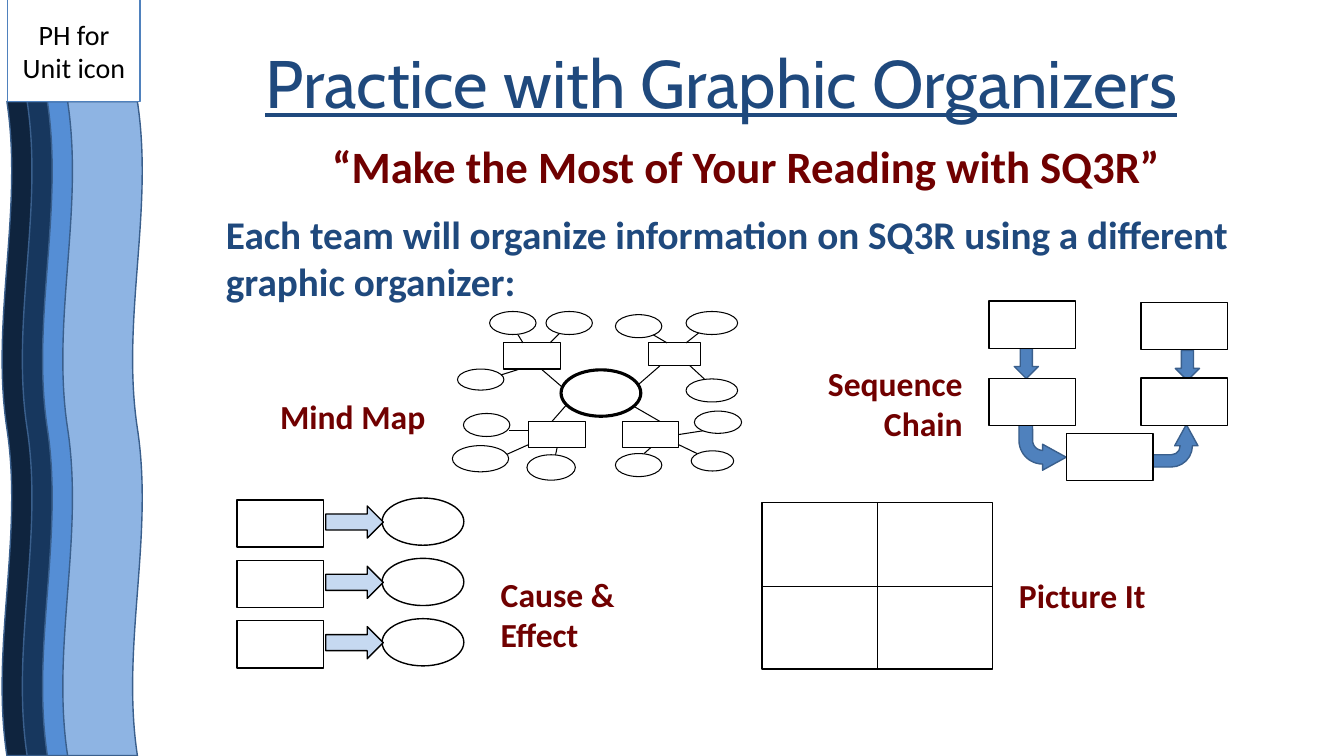
import dataclasses

import lxml.etree
import pptx
import pptx.dml.color
import pptx.enum.shapes
import pptx.enum.text
import pptx.oxml.ns
import pptx.util

Cm = pptx.util.Cm
Kind = pptx.enum.shapes.MSO_SHAPE
Align = pptx.enum.text.PP_ALIGN
Fit = pptx.enum.text.MSO_AUTO_SIZE
Anchor = pptx.enum.text.MSO_ANCHOR


@dataclasses.dataclass(frozen=True)
class Theme:
    head: str = "Cabin"
    text: str = "Calibri"
    black: str = "000000"
    white: str = "FFFFFF"
    navy: str = "1F497D"
    red: str = "700000"
    blue: str = "4F81BD"
    edge: str = "3A5F8C"
    pale: str = "C6D9F1"
    waves: tuple = ("0F243E", "17375E", "558ED5", "8EB4E3")
    big: int = 48
    sub: int = 32
    lead: int = 28
    label: int = 24
    icon: int = 20


theme = Theme()


def paint(code):
    return pptx.dml.color.RGBColor.from_string(code)


def shape(slide, kind, box, fill=theme.white, line=theme.black, width=1):
    item = slide.shapes.add_shape(kind, *map(Cm, box))
    item.shadow.inherit = False
    item.fill.solid()
    item.fill.fore_color.rgb = paint(fill)
    item.line.color.rgb = paint(line)
    item.line.width = pptx.util.Pt(width)
    return item


def link(slide, ends, width, start=None, stop=None):
    kind = pptx.enum.shapes.MSO_CONNECTOR.STRAIGHT
    item = slide.shapes.add_connector(kind, *map(Cm, ends))
    if start:
        item.begin_connect(*start)
    if stop:
        item.end_connect(*stop)
    item.line.color.rgb = paint(theme.black)
    item.line.width = pptx.util.Pt(width)
    lxml.etree.SubElement(item._element.spPr, pptx.oxml.ns.qn("a:effectLst"))


def style(para, size, color, bold=True, face=theme.text, align=Align.LEFT, after=0):
    para.alignment = align
    para.space_before = pptx.util.Pt(0)
    para.space_after = pptx.util.Pt(after)
    font = para.font
    font.name = face
    font.size = pptx.util.Pt(size)
    font.bold = bold
    font.color.rgb = paint(color)


def place(item, box):
    item.left, item.top, item.width, item.height = map(Cm, box)
    frame = item.text_frame
    frame.word_wrap = True
    frame.auto_size = Fit.NONE
    frame.vertical_anchor = Anchor.TOP
    return frame


def title(slide, box):
    frame = place(slide.shapes.title, box)
    frame.text = "Practice with Graphic Organizers\n“Make the Most of Your Reading with SQ3R”"
    head, sub = frame.paragraphs
    style(head, theme.big, theme.navy, False, theme.head, Align.CENTER, 12)
    head.font.underline = True
    sub._p.get_or_add_pPr().set("marL", str(Cm(1.27)))
    style(sub, theme.sub, theme.red, align=Align.CENTER, after=12)


def lead(slide, box):
    frame = place(slide.placeholders[1], box)
    frame.text = "Each team will organize information on SQ3R using a different graphic organizer:"
    para = frame.paragraphs[0]
    props = para._p.get_or_add_pPr()
    props.set("marL", "0")
    props.set("indent", "0")
    lxml.etree.SubElement(props, pptx.oxml.ns.qn("a:buNone"))
    style(para, theme.lead, theme.navy, after=18)


def label(slide, box, text, align=Align.LEFT):
    item = slide.shapes.add_textbox(*map(Cm, box))
    frame = item.text_frame
    frame.word_wrap = True
    frame.auto_size = Fit.SHAPE_TO_FIT_TEXT
    frame.text = text
    style(frame.paragraphs[0], theme.label, theme.red, align=align)


def side(slide, box):
    left, top, wide, high = box
    band, step = 2.01, 0.51
    for i, color in enumerate(theme.waves):
        x = left + i * step + (band - high) / 2
        y = top + (high - band) / 2
        wave = shape(slide, Kind.DOUBLE_WAVE, (x, y, high, band), color, theme.edge)
        wave.rotation = 270


def icon(slide, box):
    frame = shape(slide, Kind.RECTANGLE, box, line=theme.blue, width=0.75).text_frame
    frame.word_wrap = True
    frame.vertical_anchor = Anchor.MIDDLE
    frame.text = "PH for Unit icon"
    style(frame.paragraphs[0], theme.icon, theme.black, False, align=Align.CENTER)


def mind(slide, box):
    left, top = box[:2]
    thin = 0.75
    hubs = [
        shape(slide, Kind.RECTANGLE, (left + x, top + y, w, h), width=thin)
        for x, y, w, h in (
            (1.3, 0.79, 1.42, 0.66), (4.95, 0.79, 1.3, 0.58),
            (1.93, 2.77, 1.42, 0.66), (4.29, 2.77, 1.42, 0.66),
        )
    ]
    for a, b, c, d in (
        (2.46, 0.79, 2.72, 0.53), (5.41, 0.79, 5.05, 0.58), (5.89, 0.79, 6.22, 0.53),
        (1.7, 1.45, 1.22, 1.6), (1.93, 3, 1.42, 3), (1.93, 3.35, 1.35, 3.61),
        (4.52, 2.36, 5.23, 2.77), (5.69, 3.35, 6.17, 3.58), (2.87, 2.36, 2.51, 2.77),
        (4.7, 1.83, 5.23, 1.37), (2.74, 1.88, 2.24, 1.45), (1.78, 0.79, 1.65, 0.58),
        (5.99, 1.37, 6.35, 1.7),
    ):
        link(slide, (left + a, top + b, left + c, top + d), thin)
    for hub, edge, x, y in ((2, 2, 2.59, 3.66), (3, 2, 4.83, 3.58), (3, 3, 6.35, 3)):
        link(slide, (left + x, top + y) * 2, thin, start=(hubs[hub], edge))
    for x, y, w, h in (
        (0.94, 0, 1.17, 0.58), (2.36, 0, 1.17, 0.58), (4.11, 0.08, 1.17, 0.58),
        (5.89, 0, 1.3, 0.58), (0.13, 1.45, 1.17, 0.53), (5.89, 1.7, 1.3, 0.58),
        (0.28, 2.57, 1.17, 0.58), (6.1, 2.51, 1.19, 0.56), (0, 3.38, 1.42, 0.66),
        (1.88, 3.61, 1.22, 0.64), (4.11, 3.58, 1.17, 0.58), (6.02, 3.51, 1.07, 0.51),
    ):
        shape(slide, Kind.OVAL, (left + x, top + y, w, h), width=thin)
    shape(slide, Kind.OVAL, (left + 2.74, top + 1.47, 2.01, 1.17), width=2.25)


def cause(slide, box):
    left, top = box[:2]
    for i in range(3):
        y = top + i * 1.52
        shape(slide, Kind.RECTANGLE, (left, y + 0.05, 2.18, 1.19))
        shape(slide, Kind.FLOWCHART_CONNECTOR, (left + 3.66, y, 2.06, 1.19))
        shape(slide, Kind.RIGHT_ARROW, (left + 2.24, y + 0.2, 1.45, 0.81), theme.pale)


def chain(slide, box):
    left, top = box[:2]
    for x, y in ((0.64, 1.19), (4.7, 1.24)):
        shape(slide, Kind.DOWN_ARROW, (left + x, top + y, 0.61, 0.76), theme.blue, theme.edge)
    for x, y, w, turn in ((0.76, 3.07, 1.19, 0), (4.14, 3.05, 1.07, 270)):
        bend = shape(slide, Kind.BENT_ARROW, (left + x, top + y, w, 1.19), theme.blue, theme.edge)
        bend.rotation = turn
        bend._element.spPr.get_or_add_xfrm().set("flipV", "1")
        for i, value in enumerate((0.288, 0.275, 0.5, 0.647)):
            bend.adjustments[i] = value
    for x, y in ((0, 0), (3.84, 0.03), (0, 1.95), (3.84, 1.94), (1.96, 3.33)):
        shape(slide, Kind.RECTANGLE, (left + x, top + y, 2.18, 1.19))


def grid(slide, box):
    left, top = box[:2]
    frame = shape(slide, Kind.RECTANGLE, box)
    for start, stop in ((0, 2), (1, 3)):
        link(slide, (left, top) * 2, 0.5, (frame, start), (frame, stop))


def main():
    deck = pptx.Presentation()
    deck.slide_width, deck.slide_height = Cm(33.87), Cm(19.05)
    slide = deck.slides.add_slide(deck.slide_layouts[1])
    side(slide, (0.05, 2.56, 3.54, 16.48))
    icon(slide, (0.2, 0, 3.33, 2.57))
    title(slide, (3.81, 0.91, 28.73, 4.11))
    lead(slide, (5.44, 5.16, 28.4, 2.64))
    mind(slide, (11.4, 7.85, 7.29, 4.25))
    cause(slide, (5.97, 12.55, 5.72, 4.28))
    chain(slide, (24.92, 7.59, 6.02, 4.52))
    grid(slide, (19.2, 12.67, 5.82, 4.19))
    label(slide, (6.81, 9.86, 4.98, 1.27), "Mind Map")
    label(slide, (20.42, 9.02, 4.09, 2.31), "Sequence Chain", Align.RIGHT)
    label(slide, (25.43, 14.35, 4.98, 1.27), "Picture It")
    label(slide, (12.37, 14.33, 4.98, 2.31), "Cause & Effect")
    deck.save("out.pptx")


if __name__ == "__main__":
    main()
